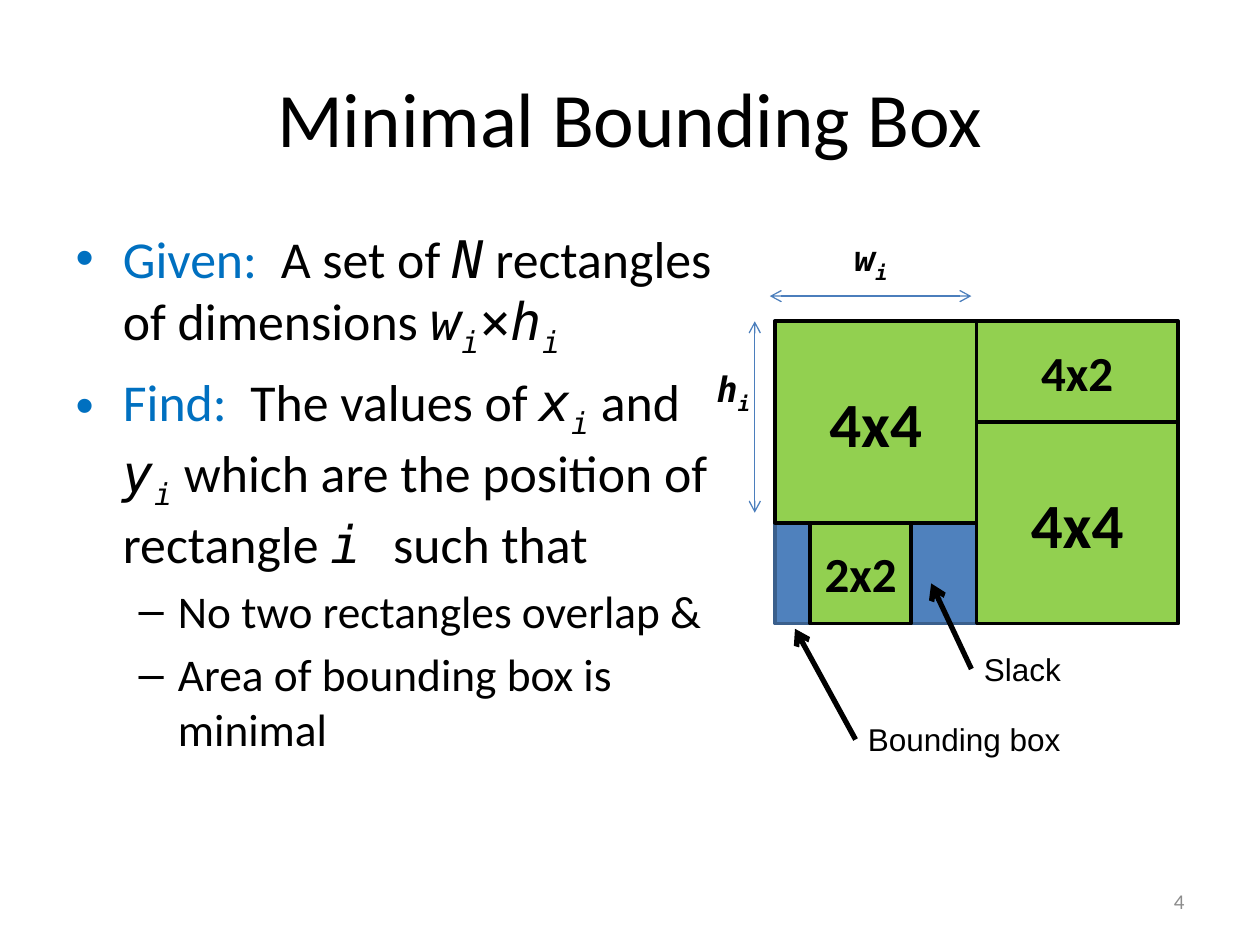
from lxml import etree
from pptx import Presentation
from pptx import util as u
from pptx.dml.color import RGBColor
from pptx.enum import shapes, text
from pptx.oxml.ns import qn

COLORS = {"ink": "000000", "lead": "0070C0", "block": "92D050", "box": "4F81BD",
          "box_edge": "3A5F8C", "measure": "4B7EBC", "number": "8C8C8C"}
SANS, MONO, LABEL = "Calibri", "DejaVu Sans Mono", "Arial"
UNIT = 28.8
LEFT, TOP = 442.8, 183.6

RUN_STYLES = {
    "plain": {},
    "lead": {"color": "lead"},
    "var": {"font": MONO, "italic": True},
    "sub": {"font": MONO, "italic": True, "sub": True},
    "sign": {"font": MONO},
}
GOALS = [
    (0, 29.6, [("Given:  ", "lead"), ("A set of ", "plain"), ("N", "var"),
               (" rectangles of dimensions ", "plain"), ("w", "var"), ("i", "sub"),
               ("×", "sign"), ("h", "var"), ("i", "sub")]),
    (0, 29.6, [("Find:  ", "lead"), ("The values of ", "plain"), ("x", "var"), ("i", "sub"),
               (" and ", "plain"), ("y", "var"), ("i", "sub"),
               (" which are the position of rectangle ", "plain"), ("i ", "var"),
               ("such that", "plain")]),
    (1, 25.9, [("No two rectangles overlap &", "plain")]),
    (1, 25.9, [("Area of bounding box is minimal", "plain")]),
]
BLOCKS = [(0, 0, 4, 4, 36), (4, 2, 4, 4, 36), (0.7, 4, 2, 2, 28), (4, 0, 4, 2, 28)]
CALLOUTS = [("Bounding box", 488.9, 408.2, 210, (454.3, 359.3)),
            ("Slack", 555.1, 367.9, 117.4, (532.1, 333.4))]
MEASURES = [("w", (481, 131.8, 64.8, 31.7), (439.9, 169.2, 555.1, 169.2)),
            ("h", (402.5, 206.6, 40.3, 31.7), (431.3, 183.6, 431.3, 293))]


class SlideBuilder:
    """Hold the drawing style and the slide being built."""

    def __init__(self, slide):
        self.slide = slide

    def color(self, name):
        return RGBColor.from_string(COLORS[name])

    def style(self, run, size, font=SANS, color="ink", bold=False, italic=False, sub=False):
        run.font.size = u.Pt(size)
        run.font.name = font
        run.font.color.rgb = self.color(color)
        run.font.bold = bold
        run.font.italic = italic
        if sub:
            run._r.get_or_add_rPr().set("baseline", "-25000")

    def place(self, part, left, top, width, height):
        part.left, part.top = u.Pt(left), u.Pt(top)
        part.width, part.height = u.Pt(width), u.Pt(height)

    def title(self, wording, *area):
        heading = self.slide.shapes.title
        self.place(heading, *area)
        heading.text_frame.text = wording
        self.style(heading.text_frame.paragraphs[0].runs[0], 44)

    def bullets(self, items, *area):
        body = self.slide.placeholders[1]
        self.place(body, *area)
        frame = body.text_frame
        frame.auto_size = text.MSO_AUTO_SIZE.NONE
        for index, (level, size, pieces) in enumerate(items):
            line = frame.add_paragraph() if index else frame.paragraphs[0]
            line.level = level
            self.add_pieces(line, size, pieces)

    def add_pieces(self, line, size, pieces, **extra):
        for wording, kind in pieces:
            run = line.add_run()
            run.text = wording
            self.style(run, size, **RUN_STYLES[kind], **extra)

    def rectangle(self, area, fill, edge, wording="", size=0):
        block = self.slide.shapes.add_shape(shapes.MSO_SHAPE.RECTANGLE, *map(u.Pt, area))
        block.shadow.inherit = False
        block.fill.solid()
        block.fill.fore_color.rgb = self.color(fill)
        block.line.color.rgb = self.color(edge)
        block.line.width = u.Pt(2)
        if wording:
            frame = block.text_frame
            frame.margin_left = frame.margin_right = 0
            frame.text = wording
            frame.vertical_anchor = text.MSO_ANCHOR.MIDDLE
            frame.paragraphs[0].alignment = text.PP_ALIGN.CENTER
            self.style(frame.paragraphs[0].runs[0], size, bold=True)

    def label(self, area, pieces, size, align=text.PP_ALIGN.LEFT,
              anchor=text.MSO_ANCHOR.TOP, **extra):
        frame = self.slide.shapes.add_textbox(*map(u.Pt, area)).text_frame
        frame.word_wrap = True
        frame.vertical_anchor = anchor
        frame.paragraphs[0].alignment = align
        self.add_pieces(frame.paragraphs[0], size, pieces, **extra)

    def arrow(self, ends, color, width, heads):
        line = self.slide.shapes.add_connector(shapes.MSO_CONNECTOR.STRAIGHT, *map(u.Pt, ends))
        line.line.color.rgb = self.color(color)
        line.line.width = u.Pt(width)
        outline = line.line._get_or_add_ln()
        for head in heads:
            etree.SubElement(outline, qn(f"a:{head}"), type="arrow")
        etree.SubElement(line._element.spPr, qn("a:effectLst"))


def main():
    deck = Presentation()
    deck.slide_width, deck.slide_height = u.Pt(720), u.Pt(540)
    builder = SlideBuilder(deck.slides.add_slide(deck.slide_layouts[1]))

    builder.rectangle((LEFT, TOP, 8 * UNIT, 6 * UNIT), "box", "box_edge")
    builder.title("Minimal Bounding Box", 36, 21.6, 648, 90)
    builder.bullets(GOALS, 36, 126, 381.6, 356.4)

    for column, row, width, height, size in BLOCKS:
        area = (LEFT + column * UNIT, TOP + row * UNIT, width * UNIT, height * UNIT)
        builder.rectangle(area, "block", "ink", f"{width}x{height}", size)

    for wording, left, top, width, target in CALLOUTS:
        builder.label((left, top, width, 28.8), [(wording, "plain")], 18, font=LABEL)
        builder.arrow((left, top + 14.4, *target), "ink", 3, ["tailEnd"])

    for symbol, area, ends in MEASURES:
        builder.arrow(ends, "measure", 0.75, ["headEnd", "tailEnd"])
        builder.label(area, [(symbol, "var"), ("i", "sub")], 20, bold=True)

    builder.label((516.2, 500.4, 167.8, 28.8), [("4", "plain")], 12, text.PP_ALIGN.RIGHT,
                  text.MSO_ANCHOR.MIDDLE, color="number")
    deck.save("out.pptx")


if __name__ == "__main__":
    main()
